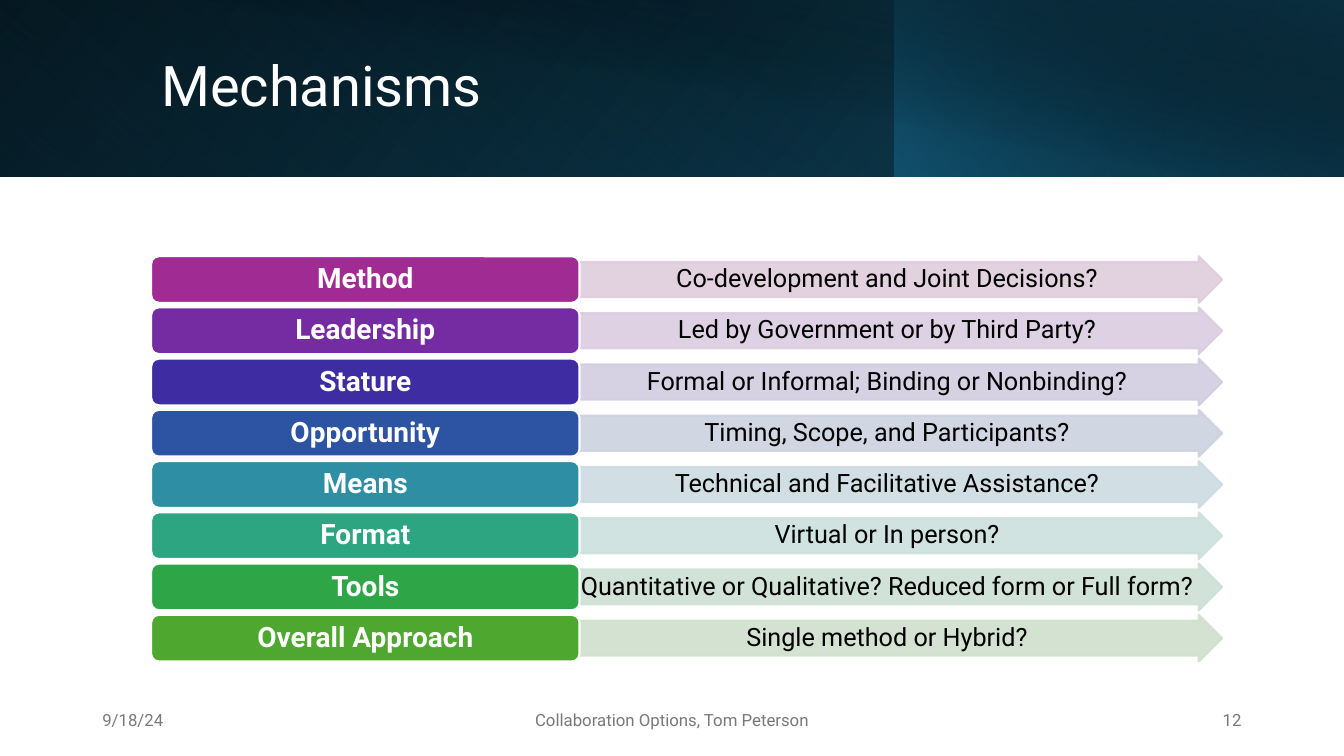
from lxml.etree import SubElement
from pptx import Presentation
from pptx.dml.color import RGBColor
from pptx.enum.shapes import MSO_SHAPE as Preset
from pptx.enum.text import MSO_ANCHOR as Anchor, MSO_AUTO_SIZE as AutoSize, PP_ALIGN as Align
from pptx.oxml.ns import qn
from pptx.util import Inches, Pt


def color(hex_value):
    return RGBColor.from_string(hex_value)


class SlideBuilder:
    font_name = "Roboto"
    columns, rows = 160, 90

    def __init__(self, deck):
        self.column = deck.slide_width / self.columns
        self.row = deck.slide_height / self.rows
        self.slide = deck.slides.add_slide(deck.slide_layouts[5])
        self.shapes = self.slide.shapes

    def cell(self, left, top, width, height):
        return (round(left * self.column), round(top * self.row),
                round(width * self.column), round(height * self.row))

    def set_text(self, target, text, size, ink, align, bold=False, insets=(0.1, 0.05, 0.1, 0.05)):
        frame = target.text_frame
        sides = ("margin_left", "margin_top", "margin_right", "margin_bottom")
        frame_format = dict(zip(sides, map(Inches, insets)), word_wrap=True,
                            auto_size=AutoSize.NONE, vertical_anchor=Anchor.MIDDLE)
        frame.text = text
        paragraph = frame.paragraphs[0]
        font = paragraph.runs[0].font
        for part, values in (
            (frame, frame_format),
            (paragraph, {"alignment": align, "line_spacing": 0.9}),
            (font, {"name": self.font_name, "size": Pt(size), "bold": bold}),
        ):
            for attribute, value in values.items():
                setattr(part, attribute, value)
        font.color.rgb = color(ink)

    def title(self, text, box):
        heading = self.shapes.title
        for attribute, value in zip(("left", "top", "width", "height"), self.cell(*box)):
            setattr(heading, attribute, value)
        heading._element.getparent().append(heading._element)
        self.set_text(heading, text, 40, "FFFFFF", Align.LEFT)

    def shape(self, preset, box):
        drawn = self.shapes.add_shape(preset, *self.cell(*box))
        drawn.shadow.inherit = False
        return drawn

    def gradient(self, box, angle, stops):
        panel = self.shape(Preset.RECTANGLE, box)
        panel.line.fill.background()
        panel.fill.gradient()
        fill = panel._element.spPr.find(qn("a:gradFill"))
        stop_list = fill.find(qn("a:gsLst"))
        for old_stop in list(stop_list):
            stop_list.remove(old_stop)
        for position, hex_value, opacity in stops:
            stop = SubElement(stop_list, qn("a:gs"), pos=str(position * 1000))
            tint = SubElement(stop, qn("a:srgbClr"), val=hex_value)
            SubElement(tint, qn("a:alpha"), val=str(opacity * 1000))
        fill.find(qn("a:lin")).set("ang", str(angle * 60000))

    def block(self, preset, box, fill, outline, opacity=100):
        drawn = self.shape(preset, box)
        drawn.fill.solid()
        drawn.fill.fore_color.rgb = color(fill)
        drawn.line.color.rgb = color(outline)
        drawn.line.width = Pt(1.5)
        if opacity < 100:
            for tint in drawn._element.spPr.iter(qn("a:srgbClr")):
                SubElement(tint, qn("a:alpha"), val=str(opacity * 1000))
        return drawn

    def label(self, box, text, fill):
        pill = self.block(Preset.ROUNDED_RECTANGLE, box, fill, "FFFFFF")
        self.set_text(pill, text, 20, "FFFFFF", Align.CENTER, True, (0.08, 0.04, 0.08, 0.04))

    def arrow(self, box, text, fill):
        pointer = self.block(Preset.RIGHT_ARROW, box, fill, fill, 90)
        pointer.adjustments[0] = 0.75
        pointer.adjustments[1] = 0.5
        self.set_text(pointer, text, 18, "000000", Align.CENTER, insets=(0.01, 0.01, 0.11, 0.01))

    def footer(self, box, text, align):
        note = self.shapes.add_textbox(*self.cell(*box))
        self.set_text(note, text, 12, "797979", align)


HEADER = [
    ((0, 0, 160, 21), 40, [(0, "000000", 100), (100, "104862", 100)]),
    ((0, 0, 106.5, 21), 130, [(20, "156082", 0), (100, "0B3041", 55)]),
    ((106.5, 0, 53.5, 21), 320, [(0, "156082", 66), (100, "000000", 30)]),
    ((6, 0, 154, 21), 280, [(50, "000000", 0), (99, "0B3041", 52)]),
]
MECHANISMS = [
    ("Method", "A02B93", "Co-development and Joint Decisions?", "DFCDDC"),
    ("Leadership", "752BA1", "Led by Government or by Third Party?", "DACDE0"),
    ("Stature", "3D2CA2", "Formal or Informal; Binding or Nonbinding?", "D2CDE0"),
    ("Opportunity", "2C54A3", "Timing, Scope, and Participants?", "CDD2E0"),
    ("Means", "2D8EA4", "Technical and Facilitative Assistance?", "CDDBE0"),
    ("Format", "2DA581", "Virtual or In person?", "CDE1DD"),
    ("Tools", "2EA648", "Quantitative or Qualitative? Reduced form or Full form?", "CDE1D4"),
    ("Overall Approach", "4EA72E", "Single method or Hybrid?", "D0E1CD"),
]
FOOTERS = [
    (11, 36, "9/18/24", Align.LEFT),
    (53, 54, "Collaboration Options, Tom Peterson", Align.CENTER),
    (113, 36, "12", Align.RIGHT),
]


def main():
    deck = Presentation()
    deck.slide_width, deck.slide_height = Inches(13.33), Inches(7.5)
    builder = SlideBuilder(deck)
    for box, angle, stops in HEADER:
        builder.gradient(box, angle, stops)
    builder.title("Mechanisms", (18, 3.8, 130, 13.5))
    for index, (mechanism, strong, question, pale) in enumerate(MECHANISMS):
        top = 30.5 + 6.1 * index
        builder.arrow((69, top, 76.5, 5.55), question, pale)
        builder.label((18, top, 51, 5.55), mechanism, strong)
    for left, width, text, align in FOOTERS:
        builder.footer((left, 83.4, width, 4.8), text, align)
    deck.save("out.pptx")


if __name__ == "__main__":
    main()
